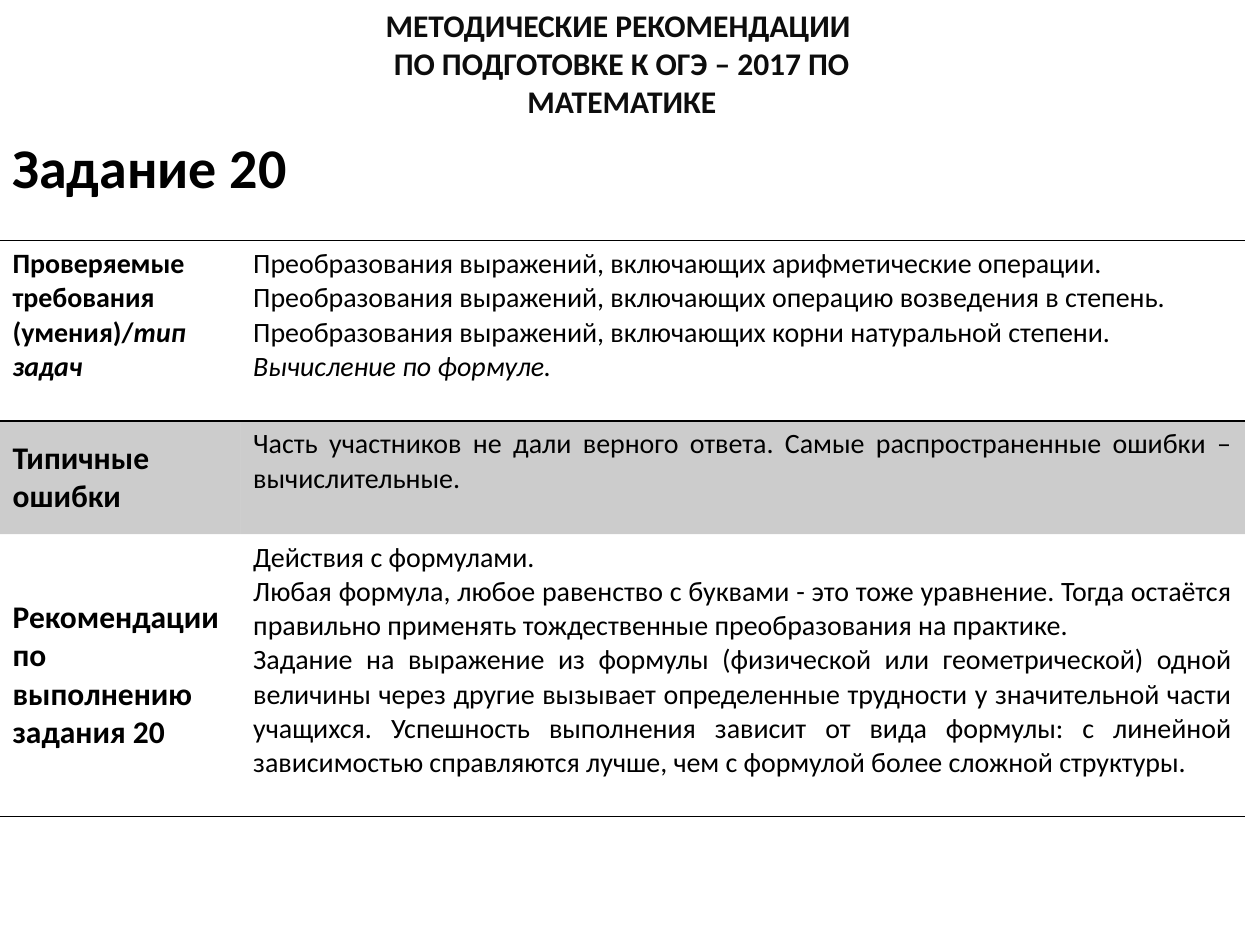
from dataclasses import dataclass

from lxml.etree import SubElement
from pptx import Presentation
from pptx.dml.color import RGBColor
from pptx.enum.text import MSO_ANCHOR as Anchor, MSO_AUTO_SIZE as AutoSize, PP_ALIGN as Align
from pptx.oxml import parse_xml
from pptx.oxml.ns import nsdecls, qn
from pptx.util import Inches, Pt


@dataclass(frozen=True)
class Theme:
    font: str = "Calibri"
    black: str = "000000"
    title: str = "0D0D0D"
    band_opacity: int = 20
    heading_size: int = 32
    label_size: int = 18
    body_size: int = 16
    border_width: int = 1


THEME = Theme()
NO_STYLE = "{2D5ABB26-0587-4C30-8999-92F81FD0307C}"


@dataclass(frozen=True)
class Line:
    text: str
    italic_tail: str = ""
    align: Align = Align.LEFT


@dataclass(frozen=True)
class Row:
    height: float
    label: Line
    lines: list[Line]
    label_size: int = THEME.label_size
    label_anchor: Anchor = Anchor.MIDDLE
    borders: str = ""
    shaded: bool = False


ROWS = [
    Row(1.43, Line("Проверяемые требования (умения)/", "тип задач"), [
        Line("Преобразования выражений, включающих арифметические операции."),
        Line("Преобразования выражений, включающих операцию возведения в степень."),
        Line("Преобразования выражений, включающих корни натуральной степени."),
        Line("", "Вычисление по формуле.", Align.JUSTIFY),
    ], label_size=THEME.body_size, label_anchor=Anchor.TOP, borders="TB"),
    Row(0.9, Line("Типичные ошибки"), [
        Line("Часть участников не дали верного ответа. Самые распространенные ошибки – "
             "вычислительные.", align=Align.JUSTIFY),
    ], shaded=True),
    Row(2.24, Line("Рекомендации по выполнению задания 20"), [
        Line("Действия с формулами.", align=Align.JUSTIFY),
        Line("Любая формула, любое равенство с буквами - это тоже уравнение. Тогда остаётся "
             "правильно применять тождественные преобразования на практике. ",
             align=Align.JUSTIFY),
        Line("Задание на выражение из формулы (физической или геометрической) одной величины "
             "через другие вызывает определенные трудности у значительной части учащихся. "
             "Успешность выполнения зависит от вида формулы: с линейной зависимостью "
             "справляются лучше, чем с формулой более сложной структуры.",
             align=Align.JUSTIFY),
    ], borders="B"),
]


def write_text(frame, lines: list[Line], *, size: int, bold: bool = False,
               color: str = THEME.black) -> None:
    for index, line in enumerate(lines):
        paragraph = frame.paragraphs[0] if index == 0 else frame.add_paragraph()
        paragraph.alignment = line.align
        for text, italic in ((line.text, False), (line.italic_tail, True)):
            if text:
                run = paragraph.add_run()
                run.text = text
                run.font.name = THEME.font
                run.font.size = Pt(size)
                run.font.bold = bold
                run.font.italic = italic
                run.font.color.rgb = RGBColor.from_string(color)


def add_text_box(slide, left: float, top: float, width: float, height: float,
                 lines: list[Line], *, wrap: bool = True, **text_format) -> None:
    box = slide.shapes.add_textbox(Inches(left), Inches(top), Inches(width), Inches(height))
    box.text_frame.word_wrap = wrap
    box.text_frame.auto_size = AutoSize.SHAPE_TO_FIT_TEXT
    write_text(box.text_frame, lines, **text_format)


def format_cell(cell, row: Row) -> None:
    if row.shaded:
        cell.fill.solid()
        cell.fill.fore_color.rgb = RGBColor.from_string(THEME.black)
    else:
        cell.fill.background()
    properties = cell._tc.get_or_add_tcPr()
    for color in properties.iter(qn("a:srgbClr")):
        SubElement(color, qn("a:alpha"), val=str(THEME.band_opacity * 1000))
    # Border elements come before the fill
    for index, side in enumerate(row.borders):
        properties.insert(index, parse_xml(
            f'<a:ln{side} {nsdecls("a")} w="{Pt(THEME.border_width)}"><a:solidFill>'
            f'<a:srgbClr val="{THEME.black}"/></a:solidFill></a:ln{side}>'))


def add_task_table(slide, left: float, top: float, widths: list[float],
                   rows: list[Row]) -> None:
    height = sum(row.height for row in rows)
    table = slide.shapes.add_table(len(rows), len(widths), Inches(left), Inches(top),
                                   Inches(sum(widths)), Inches(height)).table
    table.first_row = False
    table.horz_banding = False
    table._tbl.tblPr.find(qn("a:tableStyleId")).text = NO_STYLE
    for column, width in zip(table.columns, widths):
        column.width = Inches(width)
    for index, row in enumerate(rows):
        table.rows[index].height = Inches(row.height)
        label, body = table.cell(index, 0), table.cell(index, 1)
        label.vertical_anchor = row.label_anchor
        write_text(label.text_frame, [row.label], size=row.label_size, bold=True)
        write_text(body.text_frame, row.lines, size=THEME.body_size)
        for cell in (label, body):
            format_cell(cell, row)


def main() -> None:
    presentation = Presentation()
    presentation.slide_width, presentation.slide_height = Inches(10), Inches(7.5)
    slide = presentation.slides.add_slide(presentation.slide_layouts[6])

    # Task heading
    add_text_box(slide, 0, 1, 2.4, 0.64, [Line("Задание 20")], wrap=False,
                 size=THEME.heading_size, bold=True)

    # Requirements, mistakes and advice
    add_task_table(slide, 0, 1.91, [1.91, 7.97], ROWS)

    # Page title
    add_text_box(slide, 2.26, 0, 5.35, 1.01, [
        Line("МЕТОДИЧЕСКИЕ РЕКОМЕНДАЦИИ ", align=Align.CENTER),
        Line("ПО ПОДГОТОВКЕ К ОГЭ – 2017 ПО МАТЕМАТИКЕ", align=Align.CENTER),
    ], size=THEME.label_size, bold=True, color=THEME.title)

    presentation.save("out.pptx")


if __name__ == "__main__":
    main()
